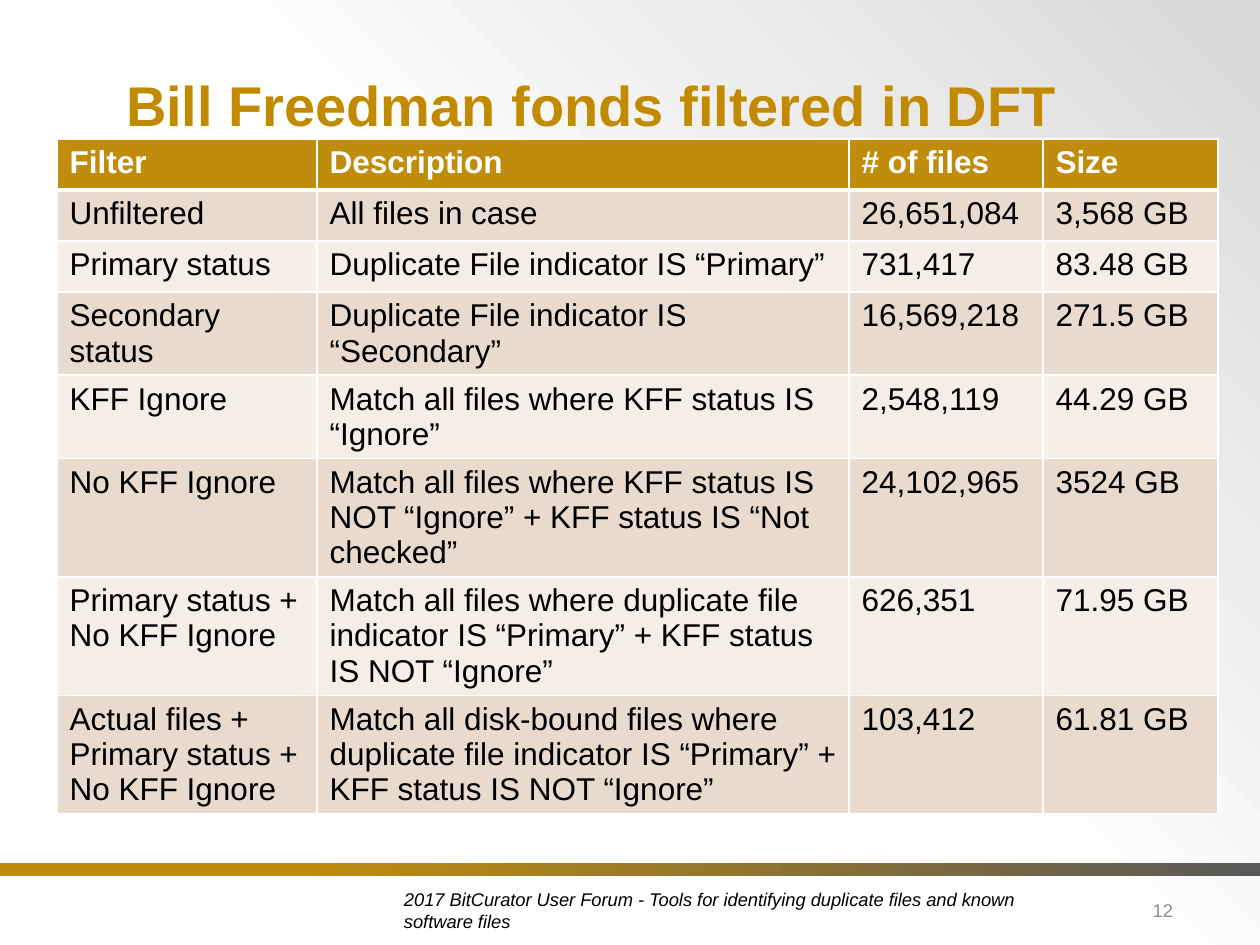
from dataclasses import dataclass

from lxml import etree
from pptx import Presentation
from pptx import util as u
from pptx.dml.color import RGBColor
from pptx.enum import shapes, text
from pptx.oxml import ns

PX = 914400 // 126
TITLE_ONLY = 5


@dataclass(frozen=True)
class Theme:
    font: str = "Arial"
    title: str = "C28A00"
    accent: str = "C08C0C"
    band_dark: str = "E8DACC"
    band_light: str = "F4EEE7"
    white: str = "FFFFFF"
    black: str = "000000"
    grey: str = "8C8C8C"
    bar_end: str = "595959"
    shade: str = "D9D9D9"
    title_size: float = 32
    table_size: float = 18
    footer_size: float = 10.5


THEME = Theme()

COLUMNS = [260, 532, 194, 175]
ROW_HEIGHT = 51
ROWS = [
    ("Filter", "Description", "# of files", "Size"),
    ("Unfiltered", "All files in case", "26,651,084", "3,568 GB"),
    ("Primary status", "Duplicate File indicator IS “Primary”", "731,417", "83.48 GB"),
    ("Secondary status", "Duplicate File indicator IS “Secondary”", "16,569,218", "271.5 GB"),
    ("KFF Ignore", "Match all files where KFF status IS “Ignore”", "2,548,119", "44.29 GB"),
    ("No KFF Ignore",
     "Match all files where KFF status IS NOT “Ignore” + KFF status IS “Not checked”",
     "24,102,965", "3524 GB"),
    ("Primary status + No KFF Ignore",
     "Match all files where duplicate file indicator IS “Primary” + KFF status IS NOT “Ignore”",
     "626,351", "71.95 GB"),
    ("Actual files + Primary status + No KFF Ignore",
     "Match all disk-bound files where duplicate file indicator IS “Primary” + "
     "KFF status IS NOT “Ignore”",
     "103,412", "61.81 GB"),
]


def emu(*lengths):
    return [u.Emu(length * PX) for length in lengths]


def rgb(color):
    return RGBColor.from_string(color)


def fill_gradient(fill, angle, stops):
    """Two-stop gradient; the angle runs counter-clockwise."""
    fill.gradient()
    fill.gradient_angle = angle
    for stop, (position, color) in zip(fill.gradient_stops, stops):
        stop.position = position
        stop.color.rgb = rgb(color)


def style(font, size, color, bold=False, italic=False):
    font.name = THEME.font
    font.size = u.Pt(size)
    font.color.rgb = rgb(color)
    font.bold = bold
    font.italic = italic


def add_span(para, words, *look, **emphasis):
    span = para.add_run()
    span.text = words
    style(span.font, *look, **emphasis)


def prepare_frame(box, anchor):
    """Wrap the text, drop the margins and return the first paragraph."""
    frame = box.text_frame
    frame.word_wrap = True
    frame.auto_size = text.MSO_AUTO_SIZE.NONE
    frame.vertical_anchor = anchor
    frame.margin_left = frame.margin_right = frame.margin_top = frame.margin_bottom = 0
    return frame.paragraphs[0]


def set_title(page, words):
    box = page.shapes.title
    box.left, box.top, box.width, box.height = emu(126, 0, 1047, 139)
    para = prepare_frame(box, text.MSO_ANCHOR.BOTTOM)
    para.alignment = text.PP_ALIGN.LEFT
    para.line_spacing = 0.9
    add_span(para, words, THEME.title_size, THEME.title, bold=True)


def add_bar(page):
    bar = page.shapes.add_shape(shapes.MSO_SHAPE.RECTANGLE, *emu(0, 863, 1260, 13))
    bar.shadow.inherit = False
    bar.line.fill.background()
    fill_gradient(bar.fill, 0, [(0.24, THEME.accent), (1, THEME.bar_end)])


def add_footer(page, words):
    box = page.shapes.add_textbox(*emu(404, 876, 663, 69))
    para = prepare_frame(box, text.MSO_ANCHOR.MIDDLE)
    add_span(para, words, THEME.footer_size, THEME.black, italic=True)


def add_page_number(page, number):
    box = page.shapes.add_textbox(*emu(1067, 876, 106, 69))
    para = prepare_frame(box, text.MSO_ANCHOR.MIDDLE)
    para.alignment = text.PP_ALIGN.RIGHT
    add_span(para, number, THEME.footer_size, THEME.grey)


def set_borders(cell, bottom):
    """White cell borders, placed before the fill as the schema asks."""
    properties = cell._tc.get_or_add_tcPr()
    widths = {"a:lnL": 1, "a:lnR": 1, "a:lnT": 1, "a:lnB": bottom}
    for index, (tag, width) in enumerate(widths.items()):
        line = etree.Element(ns.qn(tag), w=str(u.Pt(width)))
        solid = etree.SubElement(line, ns.qn("a:solidFill"))
        etree.SubElement(solid, ns.qn("a:srgbClr"), val=THEME.white)
        properties.insert(index, line)


def add_filter_table(page):
    frame = page.shapes.add_table(
        len(ROWS), len(COLUMNS),
        *emu(57, 139, sum(COLUMNS), ROW_HEIGHT * len(ROWS)))
    table = frame.table
    for column, width in zip(table.columns, COLUMNS):
        column.width = u.Emu(width * PX)
    for row_index, row in enumerate(ROWS):
        header = row_index == 0
        band = THEME.band_dark if row_index % 2 else THEME.band_light
        for column_index, words in enumerate(row):
            cell = table.cell(row_index, column_index)
            cell.fill.solid()
            cell.fill.fore_color.rgb = rgb(THEME.accent if header else band)
            set_borders(cell, bottom=3 if header else 1)
            add_span(cell.text_frame.paragraphs[0], words, THEME.table_size,
                     THEME.white if header else THEME.black, bold=header)


def main():
    deck = Presentation()
    deck.slide_width, deck.slide_height = emu(1260, 945)
    page = deck.slides.add_slide(deck.slide_layouts[TITLE_ONLY])
    fill_gradient(page.background.fill, 225, [(0, THEME.shade), (0.5, THEME.white)])
    add_bar(page)
    set_title(page, "Bill Freedman fonds filtered in DFT")
    add_footer(page, "2017 BitCurator User Forum - Tools for identifying "
                     "duplicate files and known software files")
    add_page_number(page, "12")
    add_filter_table(page)
    deck.save("out.pptx")


if __name__ == "__main__":
    main()
